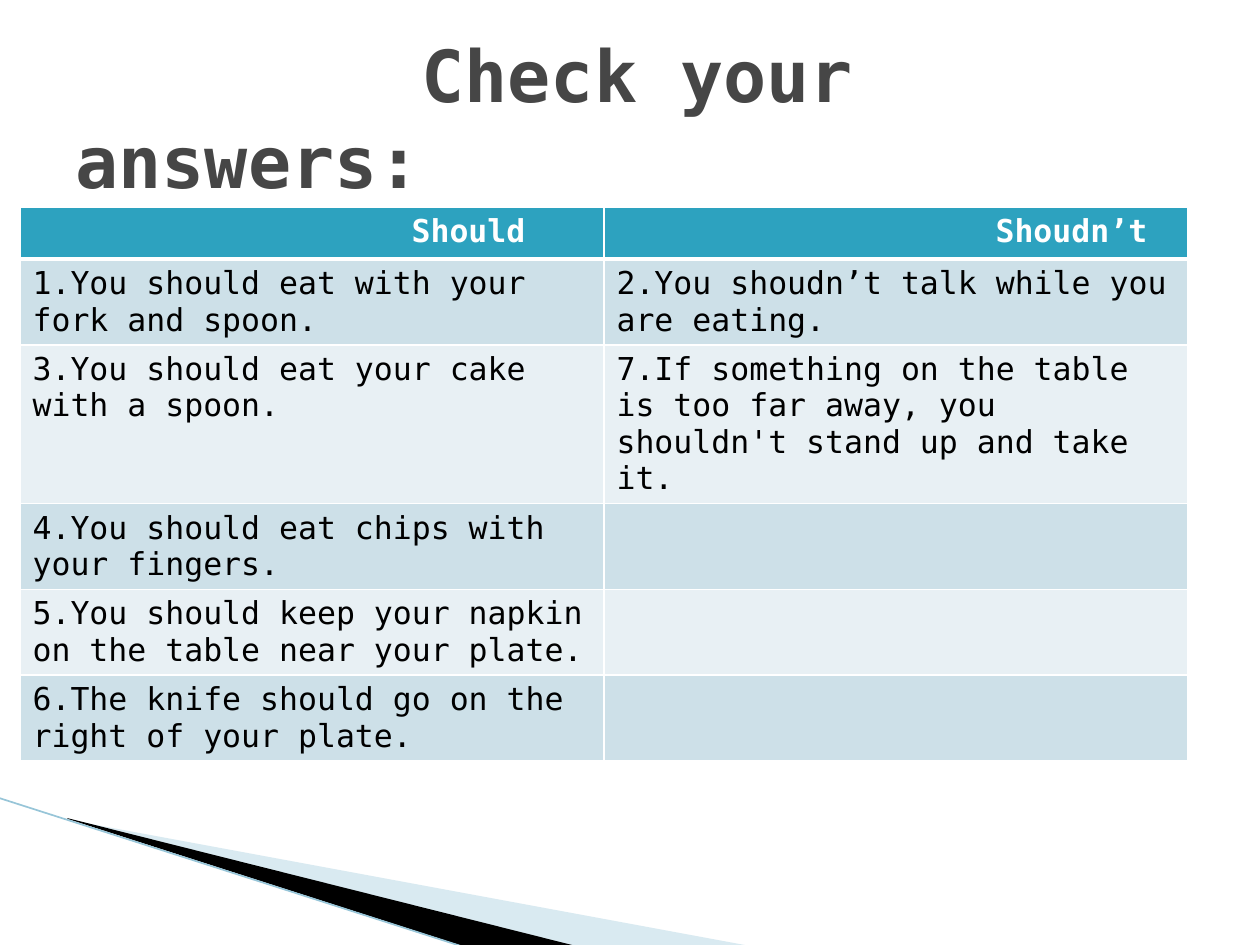
import pptx
import pptx.dml.color
import pptx.enum.text
import pptx.oxml
import pptx.oxml.ns
import pptx.util
from lxml import etree

RGBColor = pptx.dml.color.RGBColor
WHITE = RGBColor(0xFF, 0xFF, 0xFF)
BLACK = RGBColor(0, 0, 0)
TITLE_GREY = RGBColor(0x46, 0x46, 0x46)
HEADER_TEAL = RGBColor(0x2D, 0xA2, 0xBF)
BAND_DARK = RGBColor(0xCD, 0xE0, 0xE8)
BAND_LIGHT = RGBColor(0xE8, 0xF0, 0xF4)
WEDGE_BLUE = RGBColor(0xA0, 0xCB, 0xDC)
LINE_BLUE = RGBColor(0x97, 0xC5, 0xD8)

FONT = "DejaVu Sans Mono"
EMU_PER_PX = 914400 / 126
ROW_HEIGHT = 52
COLUMN_WIDTH = 584
HEADER_INDENT = 379
TITLE_INDENT = 346

HEADERS = ["Should", "Shoudn’t"]
ANSWERS = [
    ("1.You should eat with your fork and spoon.",
     "2.You shoudn’t talk while you are eating."),
    ("3.You should eat your cake with a spoon.",
     "7.If something on the table is too far away, you shouldn't stand up and take it."),
    ("4.You should eat chips with your fingers.", ""),
    ("5.You should keep your napkin on the table near your plate.", ""),
    ("6.The knife should go on the right of your plate.", ""),
]


def px(length):
    return pptx.util.Emu(round(length * EMU_PER_PX))


def write_text(frame, text, size=18, color=BLACK, bold=False, indent=0):
    """Fill the frame with one paragraph whose first line is indented."""
    para = frame.paragraphs[0]
    if indent:
        properties = para._p.get_or_add_pPr()
        properties.set("marL", "0")
        properties.set("indent", str(px(indent)))
    para.font.size = pptx.util.Pt(size)
    if text:
        span = para.add_run()
        span.text = text
        span.font.name = FONT
        span.font.size = pptx.util.Pt(size)
        span.font.bold = bold
        span.font.color.rgb = color


def add_wedge(page, points, color, opacity=100):
    builder = page.shapes.build_freeform(*points[0], scale=EMU_PER_PX)
    builder.add_line_segments(points[1:], close=True)
    wedge = builder.convert_to_shape()
    wedge.shadow.inherit = False
    wedge.line.fill.background()
    wedge.fill.solid()
    wedge.fill.fore_color.rgb = color
    if opacity < 100:
        color_element = wedge._element.spPr.find(".//" + pptx.oxml.ns.qn("a:srgbClr"))
        alpha = etree.SubElement(color_element, pptx.oxml.ns.qn("a:alpha"))
        alpha.set("val", str(opacity * 1000))


def add_line(page, start, end, color, width):
    line = page.shapes.add_connector(1, *map(px, start + end))
    line.line.color.rgb = color
    line.line.width = pptx.util.Pt(width)
    etree.SubElement(line._element.spPr, pptx.oxml.ns.qn("a:effectLst"))


def set_borders(cell, color, **widths):
    """Draw cell borders; widths are points keyed L, R, T, B."""
    properties = cell._tc.get_or_add_tcPr()
    for position, (side, width) in enumerate(widths.items()):
        border = pptx.oxml.parse_xml(
            f'<a:ln{side} {pptx.oxml.ns.nsdecls("a")} w="{pptx.util.Pt(width)}">'
            f'<a:solidFill><a:srgbClr val="{color}"/></a:solidFill></a:ln{side}>')
        properties.insert(position, border)


def add_answer_table(page):
    rows = [HEADERS, *ANSWERS]
    frame = page.shapes.add_table(
        len(rows), len(HEADERS), px(20), px(207),
        px(COLUMN_WIDTH * len(HEADERS)), px(ROW_HEIGHT * len(rows)))
    table = frame.table
    for column in table.columns:
        column.width = px(COLUMN_WIDTH)
    for row_index, texts in enumerate(rows):
        is_header = row_index == 0
        band = BAND_DARK if row_index % 2 else BAND_LIGHT
        table.rows[row_index].height = px(ROW_HEIGHT)
        for column_index, text in enumerate(texts):
            cell = table.cell(row_index, column_index)
            cell.fill.solid()
            cell.fill.fore_color.rgb = HEADER_TEAL if is_header else band
            set_borders(cell, WHITE, L=1, R=1, T=3 if row_index == 1 else 1,
                        B=3 if is_header else 1)
            write_text(cell.text_frame, text, bold=is_header,
                       color=WHITE if is_header else BLACK,
                       indent=HEADER_INDENT if is_header else 0)


def add_title(page, text):
    box = page.shapes.add_textbox(px(63), px(38), px(1134), px(157))
    box.text_frame.word_wrap = True
    box.text_frame.vertical_anchor = pptx.enum.text.MSO_ANCHOR.MIDDLE
    write_text(box.text_frame, text, size=41, color=TITLE_GREY, bold=True,
               indent=TITLE_INDENT)


def main():
    deck = pptx.Presentation()
    deck.slide_width, deck.slide_height = px(1260), px(945)
    page = deck.slides.add_slide(deck.slide_layouts[6])
    add_wedge(page, [(69, 820), (750, 946), (575, 946), (69, 819)], WEDGE_BLUE, opacity=40)
    add_wedge(page, [(67, 818), (576, 946), (469, 948), (68, 819)], BLACK)
    add_line(page, (-1, 798), (467, 948), LINE_BLUE, 0.95)
    add_answer_table(page)
    add_title(page, "Check your answers:")
    deck.save("out.pptx")


if __name__ == "__main__":
    main()
